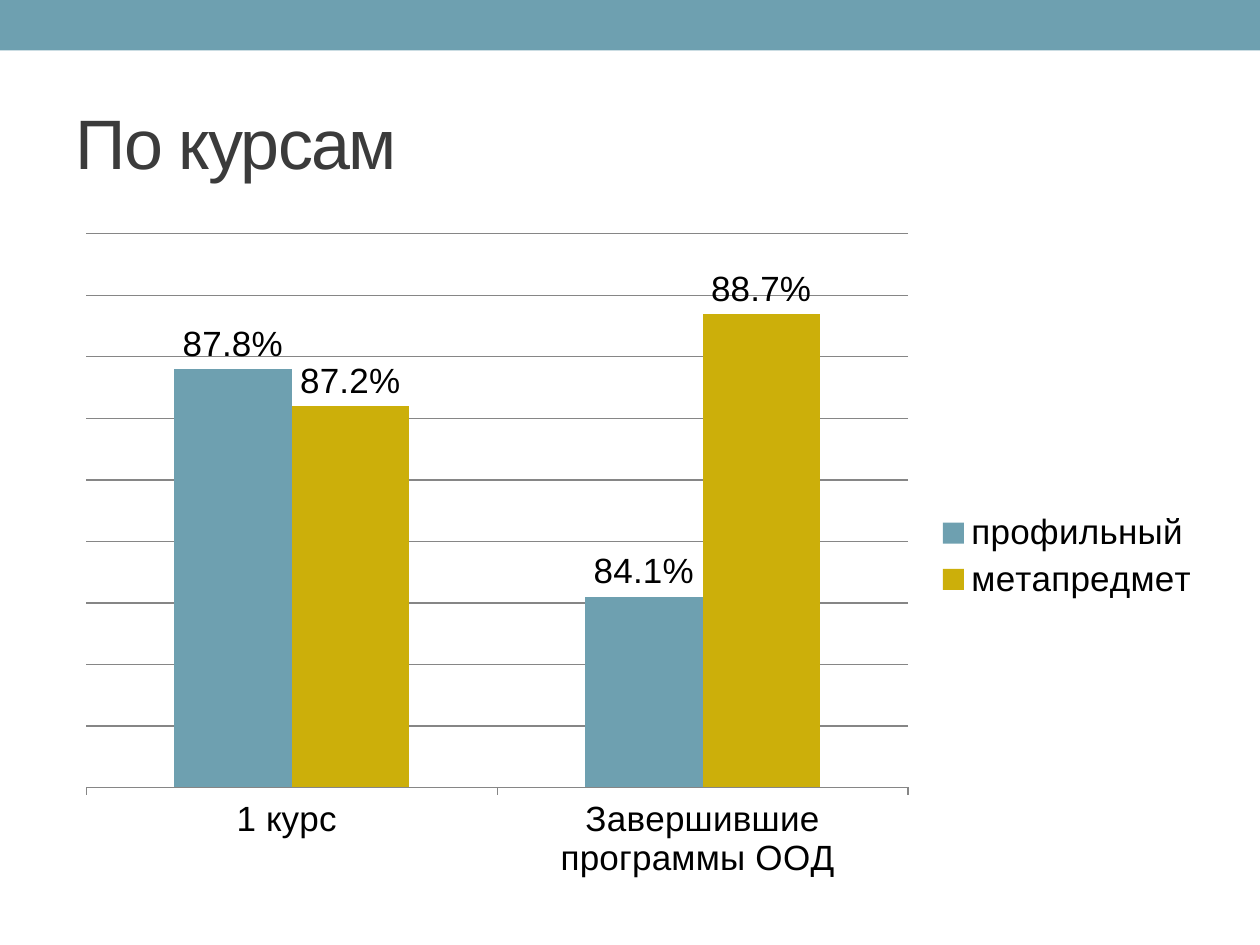
import pptx
import pptx.chart.data
import pptx.dml.color
import pptx.enum.chart
import pptx.enum.shapes
import pptx.enum.text
import pptx.util
from pptx.util import Inches

COLORS = {
    "teal": "6EA0B0",
    "gold": "CCAF0A",
    "title": "3B3B3B",
    "text": "000000",
    "grid": "868686",
}
FONT = "Arial"
CATEGORIES = ["1 курс ", "Завершившие программы ООД "]
SERIES = [
    ("профильный  ", (0.878, 0.841), "teal"),
    ("метапредмет ", (0.872, 0.887), "gold"),
]


def rgb(name):
    return pptx.dml.color.RGBColor.from_string(COLORS[name])


def format_font(font, size, color):
    font.name = FONT
    font.size = pptx.util.Pt(size)
    font.bold = False
    font.color.rgb = rgb(color)


def write_text(text_frame, text, size=20, color="text", spacing=0):
    paragraph = text_frame.paragraphs[0]
    paragraph.alignment = pptx.enum.text.PP_ALIGN.LEFT
    run = paragraph.add_run()
    run.text = text
    format_font(run.font, size, color)
    run.font._element.set("spc", str(spacing * 100))


def add_band(slide, left, top, width, height):
    band = slide.shapes.add_shape(
        pptx.enum.shapes.MSO_SHAPE.RECTANGLE, left, top, width, height)
    band.shadow.inherit = False
    band.fill.solid()
    band.fill.fore_color.rgb = rgb("teal")
    band.line.fill.background()


def place_title(slide, left, top, width, height):
    title = slide.shapes.title
    title.left, title.top, title.width, title.height = left, top, width, height
    title.text_frame.word_wrap = True
    title.text_frame.vertical_anchor = pptx.enum.text.MSO_ANCHOR.MIDDLE
    write_text(title.text_frame, "По курсам", size=40, color="title", spacing=-1)


def style_axes(chart):
    category_axis = chart.category_axis
    category_axis.major_tick_mark = pptx.enum.chart.XL_TICK_MARK.OUTSIDE
    category_axis.format.line.color.rgb = rgb("grid")
    value_axis = chart.value_axis
    value_axis.visible = False
    value_axis.minimum_scale = 0.81
    value_axis.maximum_scale = 0.9
    value_axis.major_unit = 0.01
    value_axis.tick_labels.number_format = "0.0%"
    value_axis.tick_labels.number_format_is_linked = False
    value_axis.has_major_gridlines = True
    gridline = value_axis.major_gridlines.format.line
    gridline.color.rgb = rgb("grid")
    gridline.width = pptx.util.Pt(0.75)


def style_series(series, color):
    series.smooth = False if hasattr(series, "smooth") else None
    series.format.fill.solid()
    series.format.fill.fore_color.rgb = rgb(color)
    labels = series.data_labels
    labels.show_value = True
    labels.number_format = "0.0%"
    labels.number_format_is_linked = False
    labels.position = pptx.enum.chart.XL_LABEL_POSITION.OUTSIDE_END
    format_font(labels.font, 20, "text")


def add_course_chart(slide, left, top, width, height):
    data = pptx.chart.data.CategoryChartData(number_format="0.0%")
    data.categories = CATEGORIES
    for name, values, color in SERIES:
        data.add_series(name, values)
    chart = slide.shapes.add_chart(
        pptx.enum.chart.XL_CHART_TYPE.COLUMN_CLUSTERED,
        left, top, width, height, data).chart
    format_font(chart.font, 20, "text")
    chart.has_title = False
    chart.has_legend = True
    chart.legend.position = pptx.enum.chart.XL_LEGEND_POSITION.RIGHT
    chart.legend.include_in_layout = False
    plot = chart.plots[0]
    plot.vary_by_categories = False
    plot.gap_width = 150
    plot.overlap = 0
    style_axes(chart)
    for series, (name, values, color) in zip(plot.series, SERIES):
        style_series(series, color)


def main():
    presentation = pptx.Presentation()
    presentation.slide_width = Inches(10)
    presentation.slide_height = Inches(7.5)
    slide = presentation.slides.add_slide(presentation.slide_layouts[5])
    add_band(slide, 0, 0, presentation.slide_width, Inches(0.4))
    place_title(slide, Inches(0.5), Inches(0.58), Inches(9), Inches(1.08))
    add_course_chart(slide, Inches(0.5), Inches(1.75), Inches(9.22), Inches(5.33))
    presentation.save("out.pptx")


if __name__ == "__main__":
    main()
